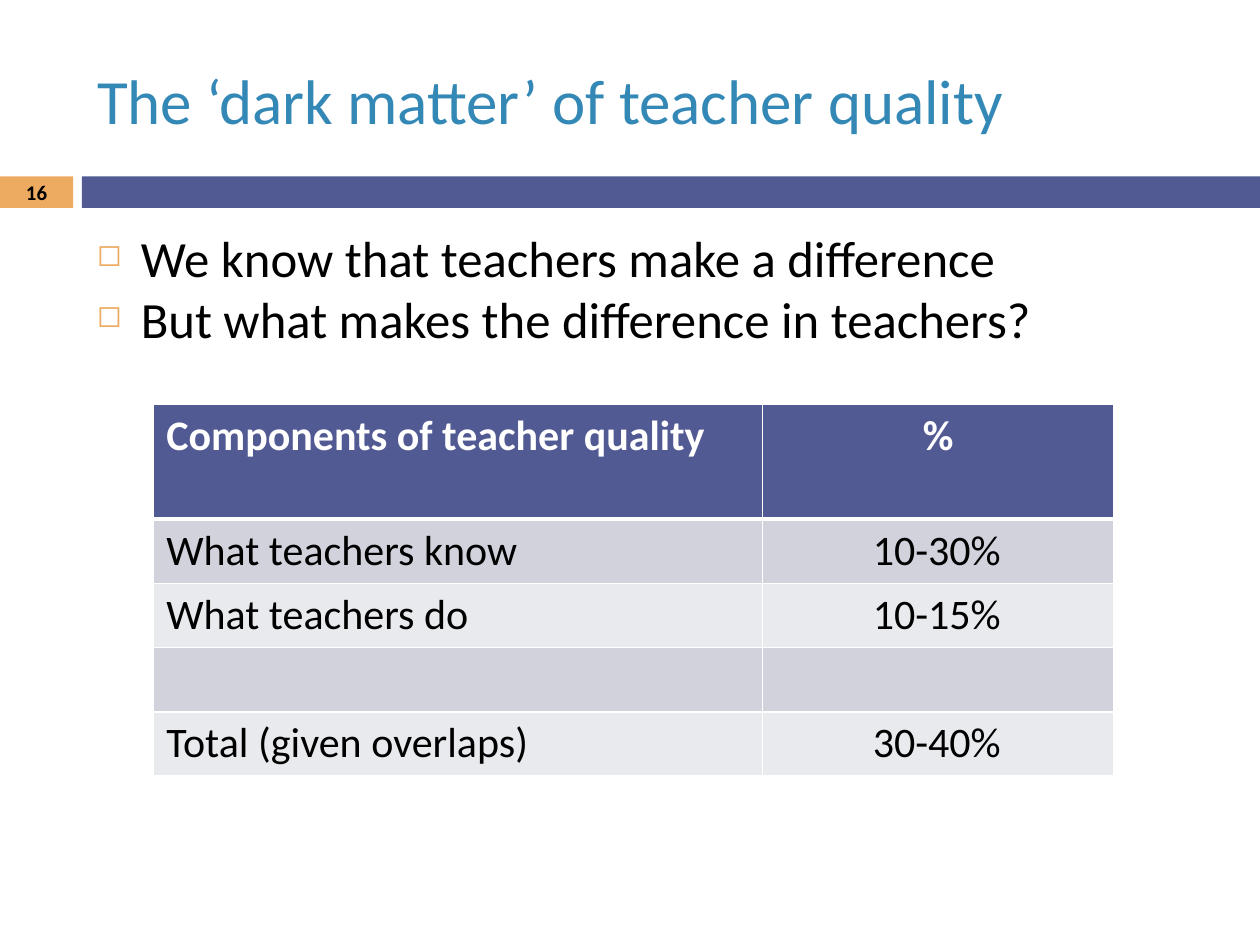
from pptx import Presentation
from pptx.dml.color import RGBColor
from pptx.enum.shapes import MSO_SHAPE
from pptx.enum.text import MSO_ANCHOR, PP_ALIGN
from pptx.oxml import parse_xml
from pptx.oxml.ns import nsdecls
from pptx.util import Inches, Pt

BLUE = RGBColor(0x34, 0x88, 0xB6)
NAVY = RGBColor(0x52, 0x5A, 0x93)
GOLD = RGBColor(0xED, 0xAA, 0x61)
DARK = RGBColor(0xD1, 0xD2, 0xDC)
PALE = RGBColor(0xE9, 0xEA, 0xEE)
BLACK = RGBColor(0, 0, 0)
WHITE = RGBColor(0xFF, 0xFF, 0xFF)


class Deck:
    font = "Calibri"

    def __init__(self, wide, high):
        self.show = Presentation()
        self.show.slide_width = Inches(wide)
        self.show.slide_height = Inches(high)
        self.slide = self.show.slides.add_slide(self.show.slide_layouts[5])

    def style(self, para, size, color, bold=False, align=PP_ALIGN.LEFT):
        para.alignment = align
        font = para.font
        font.name, font.size, font.bold = self.font, Pt(size), bold
        font.color.rgb = color

    def title(self, text, box):
        shape = self.slide.shapes.title
        shape.left, shape.top, shape.width, shape.height = map(Inches, box)
        shape.text_frame.text = text
        shape.text_frame.vertical_anchor = MSO_ANCHOR.MIDDLE
        self.style(shape.text_frame.paragraphs[0], 36, BLUE)

    def bar(self, box, color):
        shape = self.slide.shapes.add_shape(MSO_SHAPE.RECTANGLE, *map(Inches, box))
        shape.shadow.inherit = False
        shape.fill.solid()
        shape.fill.fore_color.rgb = color
        shape.line.fill.background()

    def text(self, lines, box):
        frame = self.slide.shapes.add_textbox(*map(Inches, box)).text_frame
        frame.word_wrap = True
        frame.text = "\n".join(lines)
        return frame

    def number(self, text, box):
        frame = self.text([text], box)
        frame.vertical_anchor = MSO_ANCHOR.MIDDLE
        frame.margin_top = frame.margin_bottom = 0
        self.style(frame.paragraphs[0], 11.9, BLACK, True, PP_ALIGN.CENTER)

    def bullets(self, lines, box):
        for para in self.text(lines, box).paragraphs:
            self.style(para, 29, BLACK)
            props = para._p.get_or_add_pPr()
            props.set("marL", str(Inches(0.35)))
            props.set("indent", str(-Inches(0.35)))
            for part in (
                f'<a:buClr {nsdecls("a")}><a:srgbClr val="{GOLD}"/></a:buClr>',
                f'<a:buSzPct {nsdecls("a")} val="60000"/>',
                f'<a:buChar {nsdecls("a")} char="◻"/>',
            ):
                props.append(parse_xml(part))

    def border(self, cell, head, below):
        widths = {"L": 1, "R": 1, "T": 3 if below else 1, "B": 3 if head else 1}
        props = cell._tc.get_or_add_tcPr()
        for spot, (side, width) in enumerate(widths.items()):
            props.insert(spot, parse_xml(
                f'<a:ln{side} {nsdecls("a")} w="{Pt(width)}"><a:solidFill>'
                f'<a:srgbClr val="{WHITE}"/></a:solidFill></a:ln{side}>'))

    def table(self, rows, box, cols, highs):
        grid = self.slide.shapes.add_table(
            len(rows), len(cols), *map(Inches, box)).table
        for col, width in zip(grid.columns, cols):
            col.width = Inches(width)
        for r, (row, high) in enumerate(zip(rows, highs)):
            grid.rows[r].height = Inches(high)
            head = r == 0
            for c, text in enumerate(row):
                cell = grid.cell(r, c)
                cell.text = text
                cell.fill.solid()
                cell.fill.fore_color.rgb = NAVY if head else DARK if r % 2 else PALE
                if c and not head:
                    cell.margin_right = Inches(0.12)
                self.style(cell.text_frame.paragraphs[0], 24,
                           WHITE if head else BLACK, head,
                           PP_ALIGN.CENTER if c else PP_ALIGN.LEFT)
                self.border(cell, head, r == 1)

    def save(self):
        self.show.save("out.pptx")


def main():
    deck = Deck(10, 7.5)
    deck.bar((0, 1.4, 0.58, 0.25), GOLD)
    deck.bar((0.65, 1.4, 9.35, 0.25), NAVY)
    deck.title("The ‘dark matter’ of teacher quality", (0.67, 0.25, 8.92, 1.08))
    deck.number("16", (0, 1.39, 0.58, 0.27))
    deck.bullets(["We know that teachers make a difference",
                  "But what makes the difference in teachers?"],
                 (0.67, 1.75, 9.33, 4.92))
    rows = [
        ("Components of teacher quality", "%"),
        ("What teachers know", "10-30%"),
        ("What teachers do", "10-15%"),
        ("", ""),
        ("Total (given overlaps)", "30-40%"),
    ]
    deck.table(rows, (1.22, 3.21, 7.62, 2.95), (4.83, 2.79), [0.91] + [0.51] * 4)
    deck.save()


if __name__ == "__main__":
    main()
